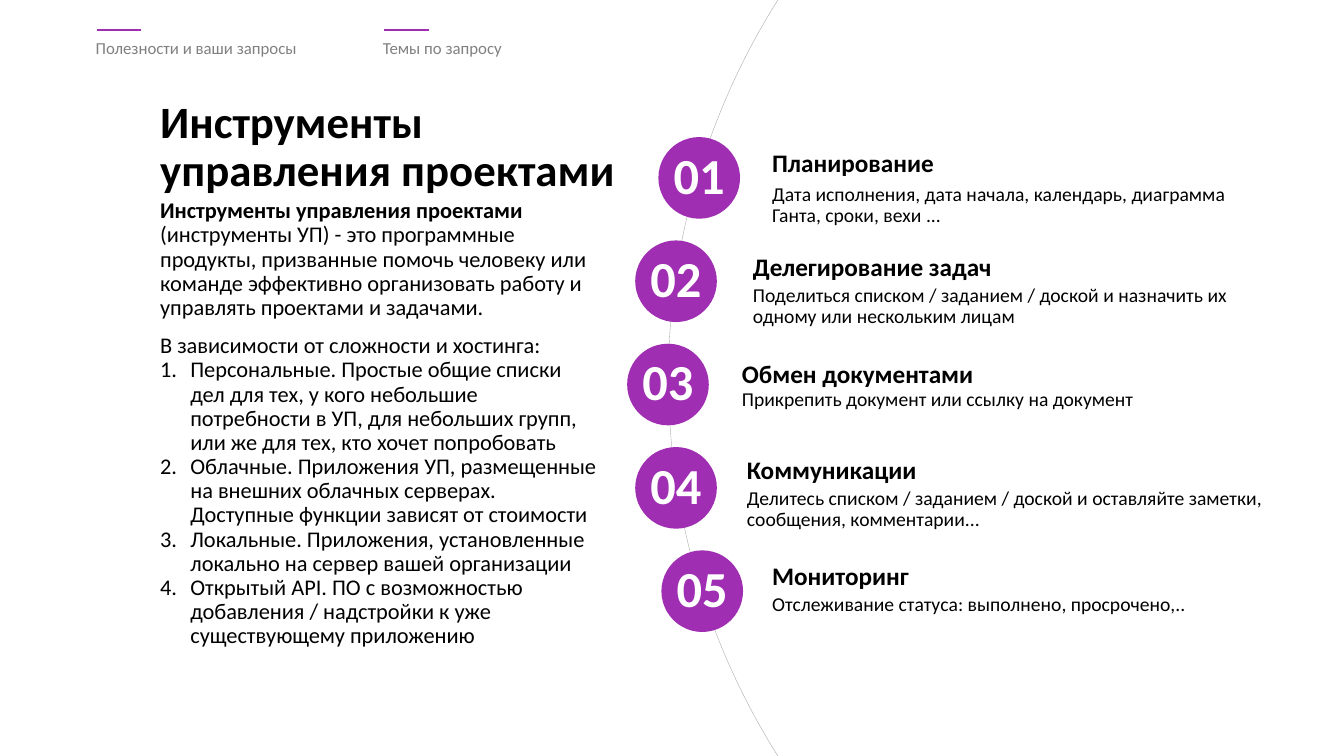
from lxml.etree import SubElement
from pptx import Presentation
from pptx.dml.color import RGBColor
from pptx.enum.shapes import MSO_CONNECTOR, MSO_SHAPE
from pptx.enum.text import MSO_ANCHOR, PP_ALIGN
from pptx.oxml.ns import qn
from pptx.util import Inches, Pt

# Content
TITLE = "Инструменты управления проектами"
DEFINITION = [
    ("Инструменты управления проектами ", True),
    ("(инструменты УП) - это программные продукты, призванные помочь человеку или команде "
     "эффективно организовать работу и управлять проектами и задачами.", False),
]
LIST_INTRO = "В зависимости от сложности и хостинга:"
TOOL_TYPES = [
    "Персональные. Простые общие списки дел для тех, у кого небольшие потребности в УП, "
    "для небольших групп, или же для тех, кто хочет попробовать",
    "Облачные. Приложения УП, размещенные на внешних облачных серверах. "
    "Доступные функции зависят от стоимости",
    "Локальные. Приложения, установленные локально на сервер вашей организации",
    "Открытый API. ПО с возможностью добавления / надстройки к уже существующему приложению",
]
# Header tabs: text, left of the accent line
TABS = [("Полезности и ваши запросы", 0.96), ("Темы по запросу", 3.81)]
# Functions: heading, description, circle left, text left, heading top, description top, description width
FUNCTIONS = [
    ("Планирование", "Дата исполнения, дата начала, календарь, диаграмма Ганта, сроки, вехи ...",
     6.53, 7.56, 1.45, 1.78, 5.09),
    ("Делегирование задач",
     "Поделиться списком / заданием / доской и назначить их одному или нескольким лицам",
     6.3, 7.37, 2.48, 2.78, 5.14),
    ("Обмен документами", "Прикрепить документ или ссылку на документ",
     6.22, 7.26, 3.54, 3.82, 5.36),
    ("Коммуникации",
     "Делитесь списком / заданием / доской и оставляйте заметки, сообщения, комментарии...",
     6.3, 7.31, 4.49, 4.8, 5.49),
    ("Мониторинг", "Отслеживание статуса: выполнено, просрочено,..",
     6.56, 7.56, 5.54, 5.85, 4.71),
]

# Style
FONT = "Calibri"
PURPLE = RGBColor(0x9F, 0x2E, 0xB2)
BLACK = RGBColor(0x00, 0x00, 0x00)
WHITE = RGBColor(0xFF, 0xFF, 0xFF)
LABEL_GRAY = RGBColor(0x80, 0x80, 0x80)
ARC_GRAY = RGBColor(0xA6, 0xA6, 0xA6)

# Layout
ARC_LEFT, ARC_TOP, ARC_SIZE = 6.63, -3.27, 14.04
CIRCLE_TOP, CIRCLE_PITCH, CIRCLE_SIZE = 1.36, 1.025, 0.81
TAB_LINE_TOP, TAB_LINE_WIDTH = 0.3, 0.44


def style_paragraph(paragraph, size, color=BLACK, bold=False, align=PP_ALIGN.LEFT):
    paragraph.alignment = align
    paragraph.line_spacing = 0.9
    font = paragraph.font
    font.name, font.size, font.bold = FONT, Pt(size), bold
    font.color.rgb = color


def add_text_box(left, top, width, height):
    text_frame = slide.shapes.add_textbox(
        Inches(left), Inches(top), Inches(width), Inches(height)).text_frame
    text_frame.word_wrap = True
    return text_frame


def add_label(text, left, top, width, height, size, **style):
    paragraph = add_text_box(left, top, width, height).paragraphs[0]
    paragraph.text = text
    style_paragraph(paragraph, size, **style)


def add_circle(left, top, size):
    circle = slide.shapes.add_shape(
        MSO_SHAPE.OVAL, Inches(left), Inches(top), Inches(size), Inches(size))
    circle.shadow.inherit = False
    return circle


def add_numbering(paragraph):
    properties = paragraph._p.get_or_add_pPr()
    properties.set("marL", str(Inches(0.3)))
    properties.set("indent", str(-Inches(0.3)))
    SubElement(properties, qn("a:buFont"), typeface="+mj-lt")
    SubElement(properties, qn("a:buAutoNum"), type="arabicPeriod")


presentation = Presentation()
presentation.slide_width, presentation.slide_height = Inches(13.33), Inches(7.5)
slide = presentation.slides.add_slide(presentation.slide_layouts[6])

# Background arc
arc = add_circle(ARC_LEFT, ARC_TOP, ARC_SIZE)
arc.fill.background()
arc.line.color.rgb = ARC_GRAY
arc.line.width = Pt(0.25)

# Header tabs
for text, left in TABS:
    line = slide.shapes.add_connector(
        MSO_CONNECTOR.STRAIGHT, Inches(left), Inches(TAB_LINE_TOP),
        Inches(left + TAB_LINE_WIDTH), Inches(TAB_LINE_TOP))
    line.line.color.rgb = PURPLE
    line.line.width = Pt(1.25)
    SubElement(line._element.spPr, qn("a:effectLst"))
    add_label(text, left - 0.11, 0.35, 2.53, 0.56, 12, color=LABEL_GRAY, align=PP_ALIGN.JUSTIFY)

# Title and definition
add_label(TITLE, 1.49, 0.94, 4.88, 0.56, 32, bold=True)
body = add_text_box(1.49, 1.93, 4.54, 4.68)
definition = body.paragraphs[0]
for text, bold in DEFINITION:
    run = definition.add_run()
    run.text = text
    run.font.bold = bold
style_paragraph(definition, 16)

# Numbered tool types
intro = body.add_paragraph()
intro.text = LIST_INTRO
style_paragraph(intro, 16, align=PP_ALIGN.JUSTIFY)
intro.space_before = Pt(10)
for text in TOOL_TYPES:
    paragraph = body.add_paragraph()
    paragraph.text = text
    add_numbering(paragraph)
    style_paragraph(paragraph, 16)

# Functions along the arc
for index, function in enumerate(FUNCTIONS):
    heading, description, circle_left, text_left, heading_top, description_top, width = function
    add_label(heading, text_left, heading_top, 3.14, 0.25, 18, bold=True)
    add_label(description, text_left, description_top, width, 0.39, 14)

    circle = add_circle(circle_left, CIRCLE_TOP + index * CIRCLE_PITCH, CIRCLE_SIZE)
    circle.fill.solid()
    circle.fill.fore_color.rgb = PURPLE
    circle.line.fill.background()
    text_frame = circle.text_frame
    text_frame.margin_left = text_frame.margin_right = 0
    text_frame.margin_top = text_frame.margin_bottom = 0
    text_frame.vertical_anchor = MSO_ANCHOR.MIDDLE
    number = text_frame.paragraphs[0]
    number.text = f"{index + 1:02}"
    style_paragraph(number, 36, color=WHITE, bold=True, align=PP_ALIGN.CENTER)

presentation.save("out.pptx")
